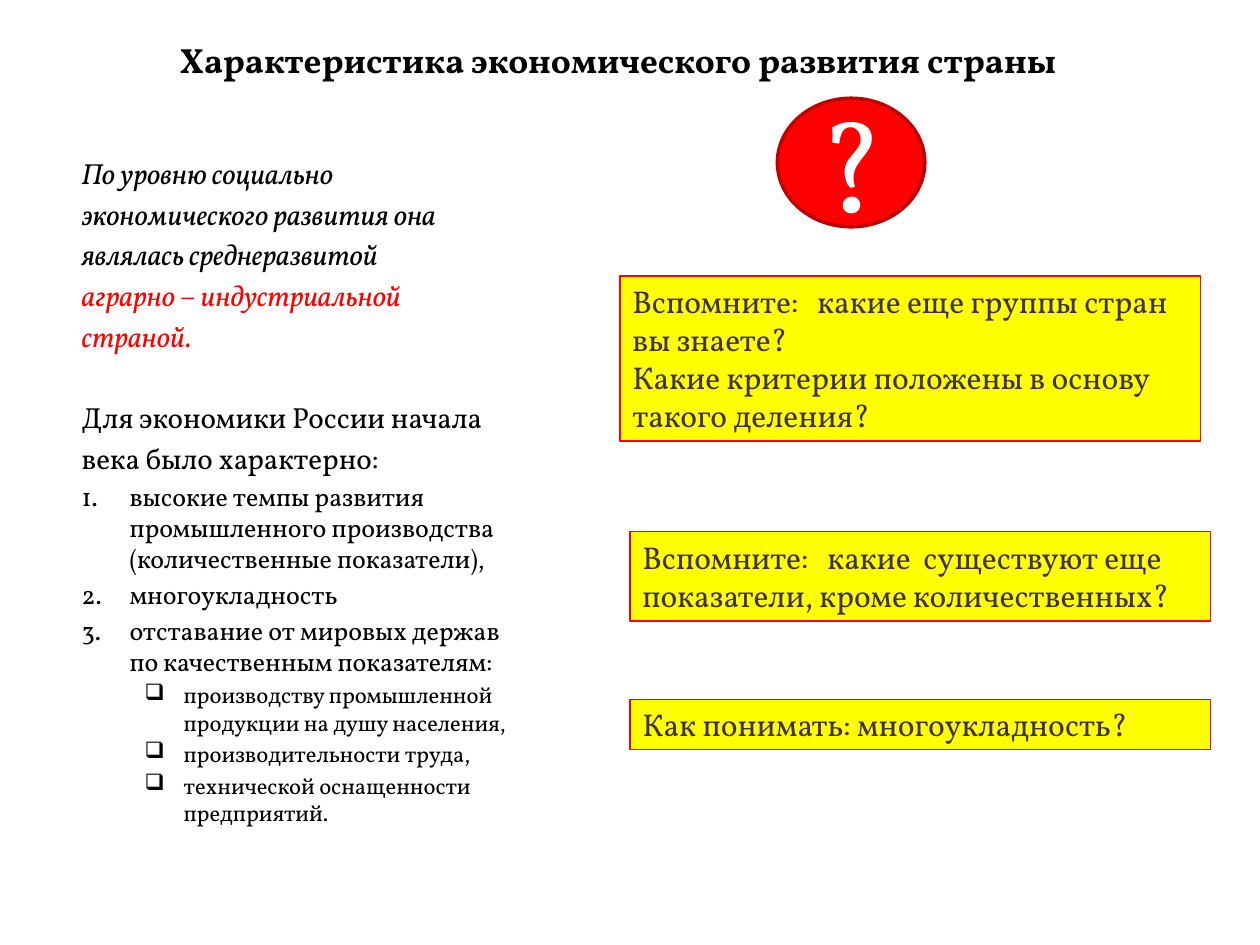
from lxml import etree
from pptx import Presentation
from pptx.dml.color import RGBColor
from pptx.enum.shapes import MSO_SHAPE
from pptx.enum.text import MSO_ANCHOR, MSO_AUTO_SIZE, PP_ALIGN
from pptx.oxml.ns import qn
from pptx.util import Inches, Pt

RECT, OVAL = MSO_SHAPE.RECTANGLE, MSO_SHAPE.OVAL
TOP, MIDDLE = MSO_ANCHOR.TOP, MSO_ANCHOR.MIDDLE
LEFT, CENTER = PP_ALIGN.LEFT, PP_ALIGN.CENTER
NO_FIT = MSO_AUTO_SIZE.NONE

BLACK = RGBColor(0x00, 0x00, 0x00)
WHITE = RGBColor(0xFF, 0xFF, 0xFF)
RED = RGBColor(0xFF, 0x00, 0x00)
DARK_RED = RGBColor(0xC0, 0x00, 0x00)
YELLOW = RGBColor(0xFF, 0xFF, 0x00)
PURPLE = RGBColor(0x40, 0x31, 0x52)

FONT = "Vollkorn"
INTRO_SIZE, ITEM_SIZE, SUBITEM_SIZE = 16.6, 14.8, 12.9
SECTION_GAP = 26.5

INTRO = ["По уровню социально", "экономического развития она", "являлась среднеразвитой"]
COUNTRY_TYPE = ["аграрно – индустриальной", "страной."]
FEATURES_LEAD = ["Для экономики России начала", "века было характерно:"]
FEATURES = [
    "высокие темпы развития промышленного производства (количественные показатели),",
    "многоукладность",
    "отставание от мировых держав по качественным показателям:",
]
LAGGING = [
    "производству промышленной продукции на душу населения,",
    "производительности труда,",
    "технической оснащенности предприятий.",
]
QUESTIONS = [
    ((4.92, 2.19, 4.61, 1.31), ["Вспомните:   какие еще группы стран вы знаете?",
                                "Какие критерии положены в основу такого деления?"]),
    ((5, 4.22, 4.61, 0.71),
     ["Вспомните:   какие  существуют еще показатели, кроме количественных?"]),
    ((5, 5.55, 4.61, 0.4), ["Как понимать: многоукладность?"]),
]


def add_text(tf, text, size, color=BLACK, bold=False, italic=False, align=LEFT, before=0):
    """Fill the first paragraph if it is still empty, otherwise append one."""
    p = tf.paragraphs[0] if not tf.text else tf.add_paragraph()
    p.alignment = align
    p.space_before = Pt(before)
    r = p.add_run()
    r.text = text
    font = r.font
    font.name, font.size = FONT, Pt(size)
    font.bold, font.italic = bold, italic
    font.color.rgb = color
    return p


def set_bullet(p, margin, hanging, tag, **attributes):
    pPr = p._p.get_or_add_pPr()
    pPr.set("marL", str(Inches(margin)))
    pPr.set("indent", str(-Inches(hanging)))
    etree.SubElement(pPr, qn(tag), attributes)


def prepare_frame(tf, anchor):
    tf.word_wrap = True
    tf.auto_size = NO_FIT
    tf.vertical_anchor = anchor


def add_title(s, text):
    sp = s.shapes.title
    sp.left, sp.top, sp.width, sp.height = map(Inches, (0.31, 0.16, 9.19, 0.63))
    prepare_frame(sp.text_frame, MIDDLE)
    add_text(sp.text_frame, text, 20, bold=True, align=CENTER, before=4)


def add_summary(s):
    sp = s.shapes.add_textbox(*map(Inches, (0.55, 0.86, 3.67, 6.07)))
    tf = sp.text_frame
    prepare_frame(tf, MIDDLE)

    def add_lines(lines, size, first_gap=None, **style):
        gap = 0.2 * size
        return [add_text(tf, line, size, before=first_gap if first_gap and i == 0 else gap, **style)
                for i, line in enumerate(lines)]

    add_lines(INTRO, INTRO_SIZE, italic=True)
    add_lines(COUNTRY_TYPE, INTRO_SIZE, italic=True, color=RED)
    add_lines(FEATURES_LEAD, INTRO_SIZE, first_gap=SECTION_GAP)
    for p in add_lines(FEATURES, ITEM_SIZE):
        set_bullet(p, 0.38, 0.38, "a:buAutoNum", type="arabicPeriod")
    for p in add_lines(LAGGING, SUBITEM_SIZE):
        p.level = 1
        set_bullet(p, 0.81, 0.31, "a:buChar", char="❑")


def add_filled_shape(s, kind, box, fill, line, line_width, anchor=TOP):
    sp = s.shapes.add_shape(kind, *map(Inches, box))
    sp.shadow.inherit = False
    sp.fill.solid()
    sp.fill.fore_color.rgb = fill
    sp.line.color.rgb = line
    sp.line.width = Pt(line_width)
    prepare_frame(sp.text_frame, anchor)
    return sp.text_frame


def add_question(s, box, lines):
    tf = add_filled_shape(s, RECT, box, YELLOW, RED, 0.75)
    for line in lines:
        add_text(tf, line, 18, color=PURPLE)


def add_question_mark(s):
    tf = add_filled_shape(s, OVAL, (6.17, 0.78, 1.17, 1.02), RED, DARK_RED, 2, MIDDLE)
    add_text(tf, "?", 72, color=WHITE, align=CENTER)


def main():
    prs = Presentation()
    prs.slide_width, prs.slide_height = Inches(10), Inches(7.5)
    s = prs.slides.add_slide(prs.slide_layouts[5])
    add_title(s, "Характеристика экономического развития страны")
    add_summary(s)
    add_question_mark(s)
    for box, lines in QUESTIONS:
        add_question(s, box, lines)
    prs.save("out.pptx")


if __name__ == "__main__":
    main()
